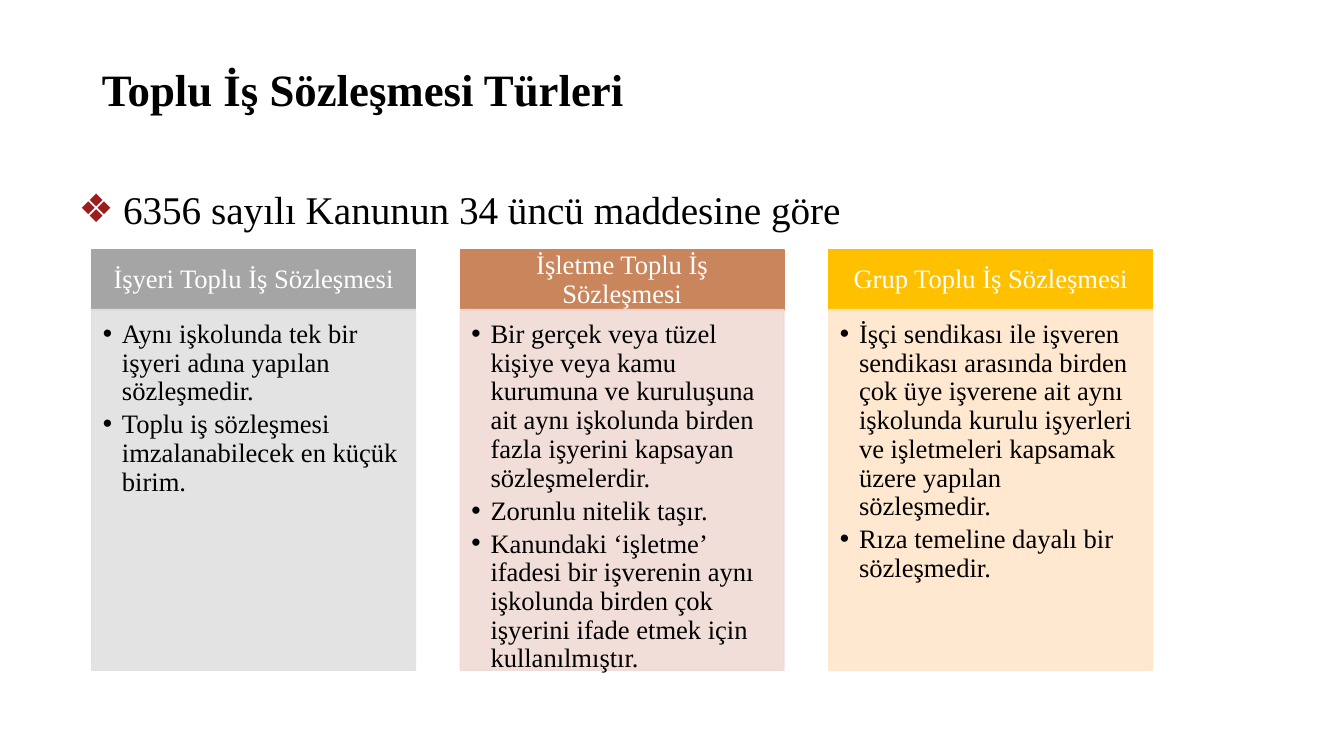
from dataclasses import dataclass

from lxml import etree
from pptx import Presentation
from pptx.dml.color import RGBColor
from pptx.enum.shapes import MSO_SHAPE
from pptx.enum.text import MSO_ANCHOR, MSO_AUTO_SIZE, PP_ALIGN
from pptx.oxml.ns import qn
from pptx.util import Inches, Pt

RECT = MSO_SHAPE.RECTANGLE
TOP, MIDDLE = MSO_ANCHOR.TOP, MSO_ANCHOR.MIDDLE
LEFT, CENTER = PP_ALIGN.LEFT, PP_ALIGN.CENTER
NO_FIT = MSO_AUTO_SIZE.NONE


@dataclass(frozen=True)
class Theme:
    font: str = "Times New Roman"
    dark: str = "000000"
    light: str = "FFFFFF"
    mark: str = "9D1D1D"
    heads: tuple = ("A5A5A5", "C9855C", "FFC000")
    fills: tuple = ("E1E1E1", "F0DBD4", "FFE6CA")
    title: int = 32
    lead: int = 28
    text: int = 19


class Deck:
    def __init__(self, slide, theme):
        self.slide = slide
        self.theme = theme

    def style(self, para, size, color, align=LEFT, bold=False):
        para.alignment = align
        para.line_spacing = 0.9
        para.space_before = Pt(0)
        font = para.font
        font.name, font.size, font.bold = self.theme.font, Pt(size), bold
        font.color.rgb = RGBColor.from_string(color)

    def bullet(self, para, char, indent, color):
        props = para._p.get_or_add_pPr()
        props.set("marL", str(Inches(indent)))
        props.set("indent", str(-Inches(indent)))
        tint = etree.SubElement(props, qn("a:buClr"))
        etree.SubElement(tint, qn("a:srgbClr"), val=color)
        etree.SubElement(props, qn("a:buFont"), typeface="Arial")
        etree.SubElement(props, qn("a:buChar"), char=char)

    def holder(self, index, box, text, anchor):
        shape = self.slide.placeholders[index]
        shape.left, shape.top, shape.width, shape.height = map(Inches, box)
        frame = shape.text_frame
        frame.text = text
        frame.auto_size = NO_FIT
        frame.vertical_anchor = anchor
        return frame.paragraphs[0]

    def title(self, box, text):
        para = self.holder(0, box, text, MIDDLE)
        self.style(para, self.theme.title, self.theme.dark, bold=True)

    def lead(self, box, text):
        para = self.holder(1, box, text, TOP)
        self.bullet(para, "❖", 0.44, self.theme.mark)
        self.style(para, self.theme.lead, self.theme.dark)

    def panel(self, box, color, anchor, insets, alpha=100):
        shape = self.slide.shapes.add_shape(RECT, *map(Inches, box))
        shape.shadow.inherit = False
        for fill in (shape.fill, shape.line.fill):
            fill.solid()
            fill.fore_color.rgb = RGBColor.from_string(color)
        shape.line.width = Pt(1)
        if alpha < 100:
            for tint in shape._element.spPr.iter(qn("a:srgbClr")):
                etree.SubElement(tint, qn("a:alpha"), val=str(alpha * 1000))
        frame = shape.text_frame
        frame.word_wrap = True
        frame.vertical_anchor = anchor
        (frame.margin_left, frame.margin_top,
         frame.margin_right, frame.margin_bottom) = map(Inches, insets)
        return frame

    def header(self, box, color, text):
        frame = self.panel(box, color, MIDDLE, (0.15, 0.08, 0.15, 0.08))
        frame.text = text
        self.style(frame.paragraphs[0], self.theme.text, self.theme.light, CENTER)

    def points(self, box, color, items):
        frame = self.panel(box, color, TOP, (0.11, 0.11, 0.15, 0.17), 90)
        frame.text = "\n".join(items)
        for para in frame.paragraphs:
            self.bullet(para, "•", 0.19, self.theme.dark)
            self.style(para, self.theme.text, self.theme.dark)
            para.space_after = Pt(3)


# Column headings and points
COLUMNS = (
    ("İşyeri Toplu İş Sözleşmesi", (
        "Aynı işkolunda tek bir işyeri adına yapılan sözleşmedir.",
        "Toplu iş sözleşmesi imzalanabilecek en küçük birim.",
    )),
    ("İşletme Toplu İş Sözleşmesi", (
        "Bir gerçek veya tüzel kişiye veya kamu kurumuna ve kuruluşuna ait "
        "aynı işkolunda birden fazla işyerini kapsayan sözleşmelerdir.",
        "Zorunlu nitelik taşır.",
        "Kanundaki ‘işletme’ ifadesi bir işverenin aynı işkolunda birden çok "
        "işyerini ifade etmek için kullanılmıştır.",
    )),
    ("Grup Toplu İş Sözleşmesi", (
        "İşçi sendikası ile işveren sendikası arasında birden çok üye işverene "
        "ait aynı işkolunda kurulu işyerleri ve işletmeleri kapsamak üzere "
        "yapılan sözleşmedir.",
        "Rıza temeline dayalı bir sözleşmedir.",
    )),
)


def main():
    show = Presentation()
    show.slide_width, show.slide_height = Inches(13.33), Inches(7.5)
    theme = Theme()
    deck = Deck(show.slides.add_slide(show.slide_layouts[1]), theme)

    # Title and lead line
    deck.title((0.91, 0.24, 11.71, 1.35), "Toplu İş Sözleşmesi Türleri")
    deck.lead((0.68, 1.84, 11.5, 4.76), "6356 sayılı Kanunun 34 üncü maddesine göre")

    # Three columns at an equal step
    left, step, width = 0.91, 3.655, 3.21
    for num, (head, items) in enumerate(COLUMNS):
        x = left + num * step
        deck.header((x, 2.48, width, 0.6), theme.heads[num], head)
        deck.points((x, 3.07, width, 3.58), theme.fills[num], items)

    show.save("out.pptx")


if __name__ == "__main__":
    main()
